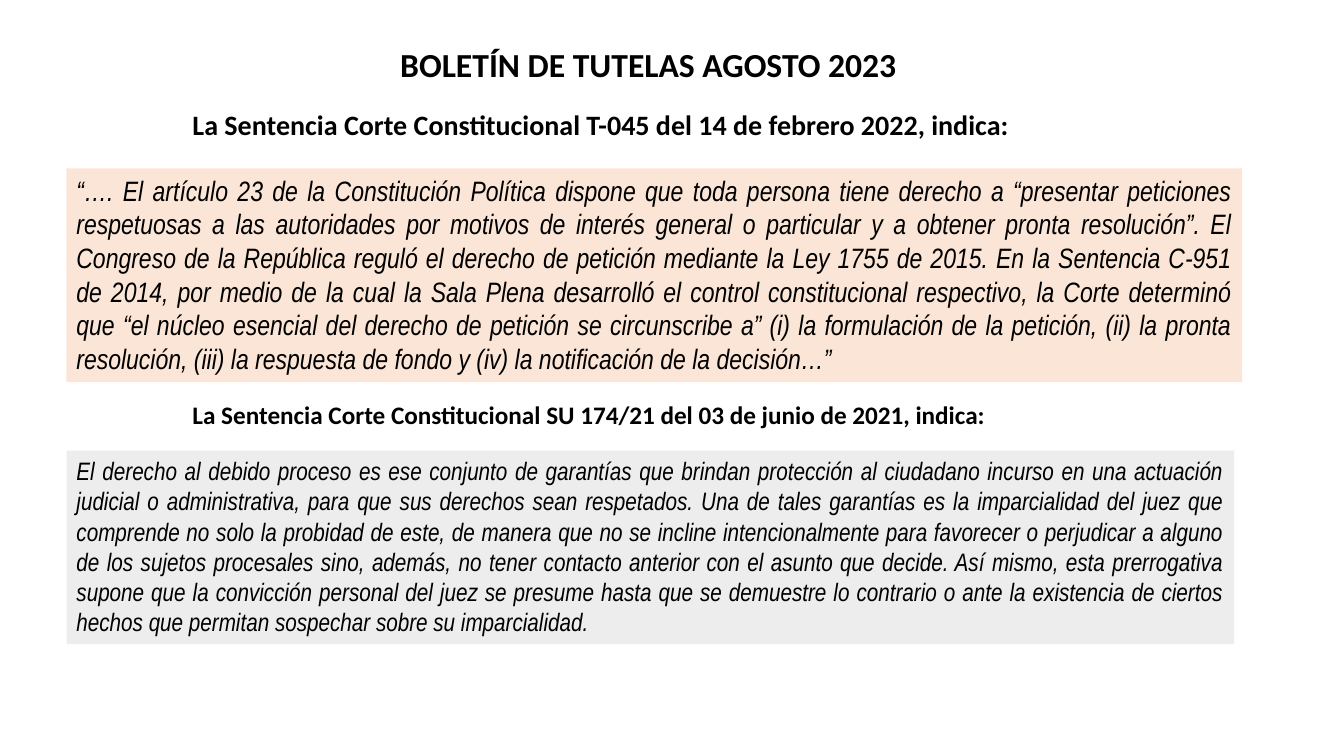
from pptx import Presentation
from pptx.dml.color import RGBColor as RGB
from pptx.enum.shapes import MSO_SHAPE as Shape
from pptx.enum.text import MSO_ANCHOR as Anchor, MSO_AUTO_SIZE as Fit, PP_ALIGN as Align
from pptx.util import Inches, Pt

COLORS = {"ink": "000000", "peach": "FBE5D6", "gray": "EDEDED"}
HEAD, BODY = "Calibri", "Arial Narrow"
LEFT, INDENT = 4.95, 13.58

TITLE = "BOLETÍN DE TUTELAS AGOSTO 2023"
PETITION_HEAD = "La Sentencia Corte Constitucional T-045 del 14 de febrero 2022, indica:"
PETITION = (
    "“…. El artículo 23 de la Constitución Política dispone que toda persona tiene "
    "derecho a “presentar peticiones respetuosas a las autoridades por motivos de "
    "interés general o particular y a obtener pronta resolución”. El Congreso de la "
    "República reguló el derecho de petición mediante la Ley 1755 de 2015. En la "
    "Sentencia C-951 de 2014, por medio de la cual la Sala Plena desarrolló el control "
    "constitucional respectivo, la Corte determinó que “el núcleo esencial del derecho "
    "de petición se circunscribe a” (i) la formulación de la petición, (ii) la pronta "
    "resolución, (iii) la respuesta de fondo y (iv) la notificación de la decisión…”"
)
PROCESS_HEAD = "La Sentencia Corte Constitucional SU 174/21 del 03 de junio de 2021, indica:"
PROCESS = (
    "El derecho al debido proceso es ese conjunto de garantías que brindan protección "
    "al ciudadano incurso en una actuación judicial o administrativa, para que sus "
    "derechos sean respetados. Una de tales garantías es la imparcialidad del juez que "
    "comprende no solo la probidad de este, de manera que no se incline "
    "intencionalmente para favorecer o perjudicar a alguno de los sujetos procesales "
    "sino, además, no tener contacto anterior con el asunto que decide. Así mismo, esta "
    "prerrogativa supone que la convicción personal del juez se presume hasta que se "
    "demuestre lo contrario o ante la existencia de ciertos hechos que permitan "
    "sospechar sobre su imparcialidad."
)


class Page:
    """One slide whose lengths are percentages of its width and height."""

    def __init__(self, deck):
        self.deck = deck
        self.slide = deck.slides.add_slide(deck.slide_layouts[5])
        self.shapes = self.slide.shapes

    def place(self, x, y, w, h):
        wide, high = self.deck.slide_width, self.deck.slide_height
        return [int(share * size / 100)
                for share, size in ((x, wide), (y, high), (w, wide), (h, high))]

    def label(self, shape, text, size, font, bold=False, italic=False,
              align=Align.LEFT, wrap=True):
        frame = shape.text_frame
        frame.text = text
        frame.word_wrap = wrap
        frame.auto_size = Fit.SHAPE_TO_FIT_TEXT
        frame.vertical_anchor = Anchor.TOP
        para = frame.paragraphs[0]
        para.alignment = align
        style = para.runs[0].font
        style.name, style.size = font, Pt(size)
        style.bold, style.italic = bold, italic
        style.color.rgb = RGB.from_string(COLORS["ink"])

    def title(self, text, box, size):
        shape = self.shapes.title
        shape.left, shape.top, shape.width, shape.height = self.place(*box)
        self.label(shape, text, size, HEAD, bold=True, wrap=False)

    def heading(self, text, box, size):
        shape = self.shapes.add_textbox(*self.place(*box))
        self.label(shape, text, size, HEAD, bold=True)

    def quote(self, text, box, size, fill):
        shape = self.shapes.add_shape(Shape.RECTANGLE, *self.place(*box))
        shape.shadow.inherit = False
        shape.fill.solid()
        shape.fill.fore_color.rgb = RGB.from_string(COLORS[fill])
        shape.line.fill.background()
        self.label(shape, text, size, BODY, italic=True, align=Align.JUSTIFY)


def main():
    deck = Presentation()
    deck.slide_width, deck.slide_height = Inches(13.33), Inches(7.5)
    page = Page(deck)
    page.title(TITLE, (29.03, 5.2, 38.78, 6.67), 24)
    page.heading(PETITION_HEAD, (INDENT, 13.6, 75.47, 5.87), 20)
    page.quote(PETITION, (LEFT, 22.27, 87.47, 28.27), 20, "peach")
    page.heading(PROCESS_HEAD, (INDENT, 52.13, 77.87, 5.33), 18)
    page.quote(PROCESS, (LEFT, 59.6, 86.87, 25.6), 18, "gray")
    deck.save("out.pptx")


if __name__ == "__main__":
    main()
